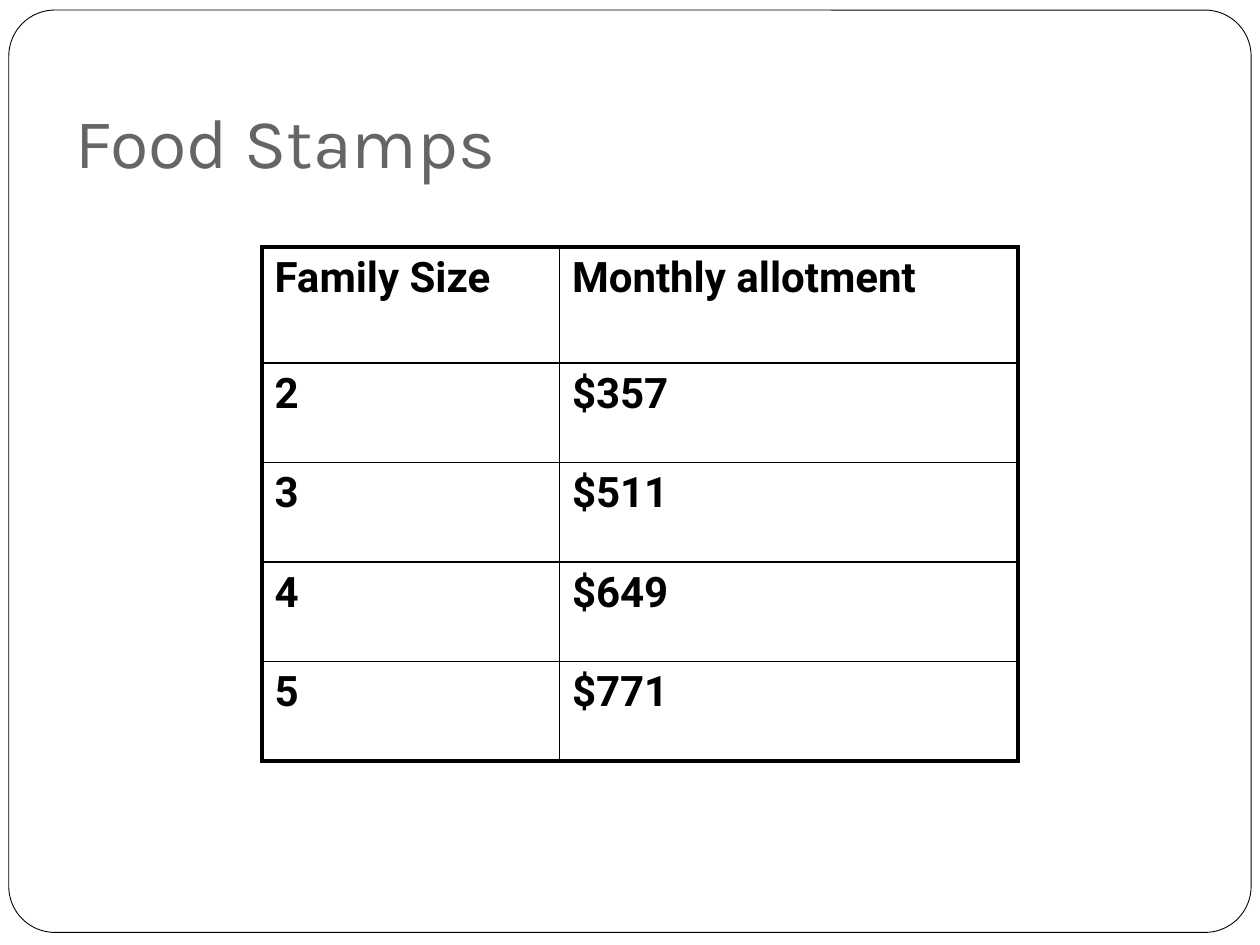
from dataclasses import dataclass

from lxml import etree
from pptx import Presentation
from pptx import util as u
from pptx.dml.color import RGBColor
from pptx.enum import shapes, text
from pptx.oxml import ns


@dataclass
class Theme:
    paper: str = "FFFFFF"
    ink: str = "000000"
    title: str = "696464"
    title_font: str = "Karla"
    table_font: str = "Roboto"
    title_size: int = 40
    table_size: int = 24
    frame: float = 0.5
    inner: float = 1
    outer: float = 2.25


theme = Theme()
PX = u.Inches(1) // 100


def write(tf, content, font, size, color, bold=False):
    p = tf.paragraphs[0]
    p.alignment = text.PP_ALIGN.LEFT
    r = p.add_run()
    r.text = content
    r.font.name = font
    r.font.size = u.Pt(size)
    r.font.bold = bold
    r.font.color.rgb = RGBColor.from_string(color)
    return p


def border(cell, side, width):
    tcPr = cell._tc.get_or_add_tcPr()
    ln = etree.SubElement(tcPr, ns.qn(f"a:ln{side}"), w=str(u.Pt(width)))
    fill = etree.SubElement(ln, ns.qn("a:solidFill"))
    etree.SubElement(fill, ns.qn("a:srgbClr"), val=theme.ink)


prs = Presentation()
prs.slide_width, prs.slide_height = 1000 * PX, 750 * PX
slide = prs.slides.add_slide(prs.slide_layouts[5])

frame = slide.shapes.add_shape(
    shapes.MSO_SHAPE.ROUNDED_RECTANGLE, 7 * PX, 8 * PX, 986 * PX, 732 * PX)
frame.adjustments[0] = 0.05
frame.shadow.inherit = False
frame.fill.solid()
frame.fill.fore_color.rgb = RGBColor.from_string(theme.paper)
frame.line.color.rgb = RGBColor.from_string(theme.ink)
frame.line.width = u.Pt(theme.frame)
slide.shapes._spTree.insert(2, frame._element)

title = slide.shapes.title
title.left, title.top, title.width, title.height = 50 * PX, 30 * PX, 900 * PX, 125 * PX
tf = title.text_frame
tf.word_wrap = True
tf.vertical_anchor = text.MSO_ANCHOR.BOTTOM
tf.margin_left = tf.margin_right = tf.margin_bottom = 10 * PX
tf.margin_top = 5 * PX
write(tf, "Food Stamps", theme.title_font, theme.title_size, theme.title)

rows = [
    ("Family Size", "Monthly allotment"),
    ("2", "$357"),
    ("3", "$511"),
    ("4", "$649"),
    ("5", "$771"),
]
widths = [236, 364]
heights = [92] + [79] * 4
table = slide.shapes.add_table(
    len(rows), len(widths), 208 * PX, 196 * PX, sum(widths) * PX, sum(heights) * PX).table
table.first_row = table.horz_banding = False
for col, width in zip(table.columns, widths):
    col.width = width * PX
for row, height in zip(table.rows, heights):
    row.height = height * PX

for i, row in enumerate(rows):
    for j, content in enumerate(row):
        cell = table.cell(i, j)
        p = write(cell.text_frame, content, theme.table_font, theme.table_size,
                  theme.ink, bold=True)
        before = etree.SubElement(p._p.get_or_add_pPr(), ns.qn("a:spcBef"))
        etree.SubElement(before, ns.qn("a:spcPct"), val="20000")
        edges = {"L": j == 0, "R": j == len(row) - 1, "T": i == 0, "B": i == len(rows) - 1}
        for side, outside in edges.items():
            border(cell, side, theme.outer if outside else theme.inner)
        cell.fill.background()

prs.save("out.pptx")
